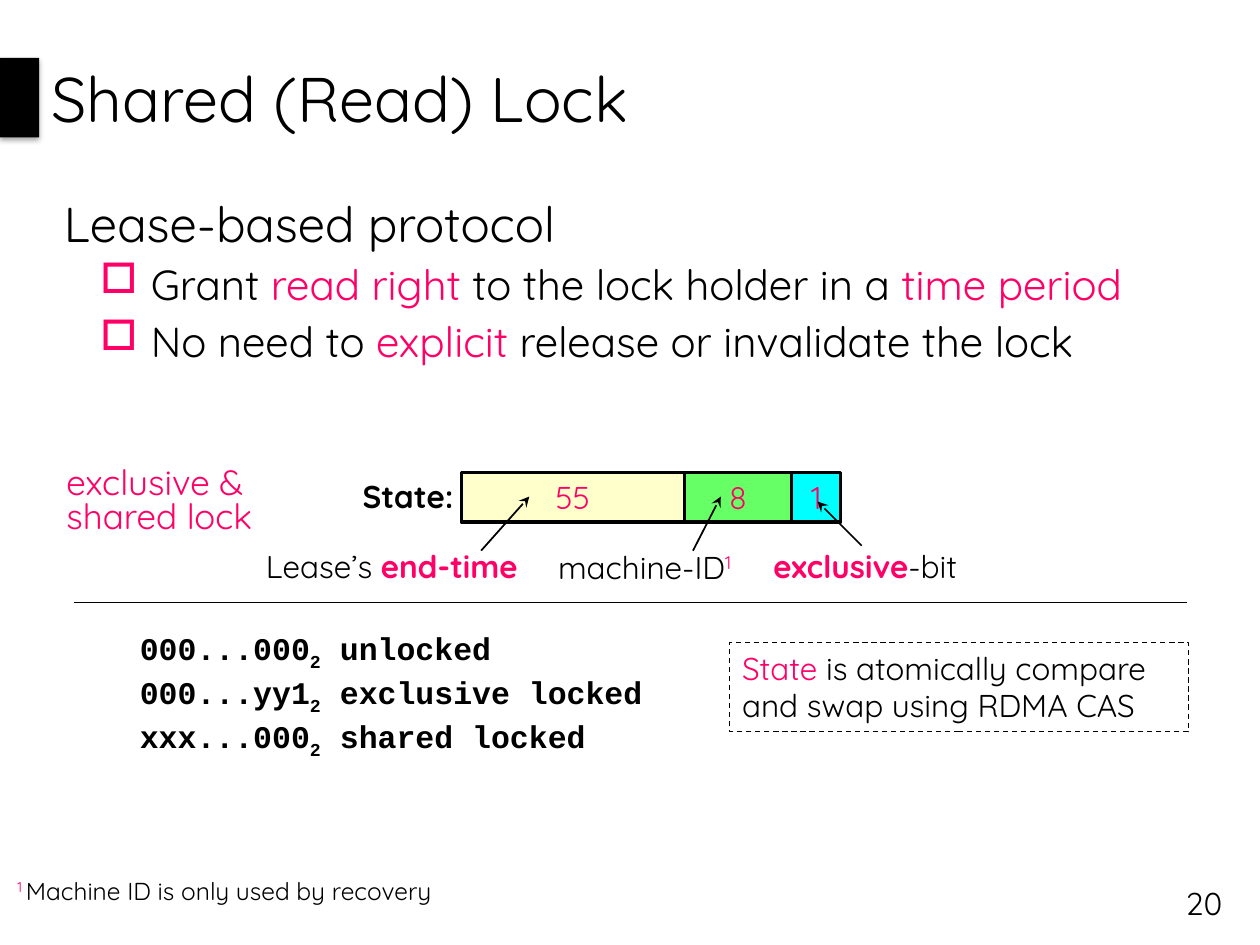
from lxml import etree
from pptx import Presentation
from pptx.dml.color import RGBColor
from pptx.enum.dml import MSO_LINE
from pptx.enum.shapes import MSO_CONNECTOR, MSO_SHAPE
from pptx.enum.text import MSO_ANCHOR, PP_ALIGN
from pptx.oxml import parse_xml
from pptx.oxml.ns import nsdecls, qn
from pptx.util import Cm, Pt

BLACK = RGBColor(0x00, 0x00, 0x00)
PINK = RGBColor(0xFF, 0x00, 0x66)
CREAM = RGBColor(0xFF, 0xFF, 0xCC)
GREEN = RGBColor(0x66, 0xFF, 0x66)
CYAN = RGBColor(0x00, 0xFF, 0xFF)

# A run is (text, colour, bold, baseline in percent); the last ones may be left out.
TITLE = [("Shared (Read) Lock",)]
HEADING = [("Lease-based protocol",)]
BULLETS = [
    [("Grant ",), ("read right ", PINK), ("to the lock holder in a ",), ("time period", PINK)],
    [("No need to ",), ("explicit ", PINK), ("release or invalidate the lock",)],
]
FIELDS = [("55", 4.5, CREAM), ("8", 2.16, GREEN), ("1", 0.99, CYAN)]
FIELDS_LEFT, FIELDS_TOP, FIELDS_HEIGHT = 9.3, 9.53, 0.99
FIELD_LABELS = [  # left, top, width, runs
    (5.11, 10.9, 6.17, [("Lease’s ",), ("end-time", PINK, True)]),
    (11.0, 10.92, 4.6, [("machine-ID",), ("1", PINK, False, 30)]),
    (15.34, 10.9, 5.05, [("exclusive", PINK, True), ("-bit",)]),
    (7.06, 9.5, 2.6, [("State:", BLACK, True)]),
]
ARROWS = [
    ((9.7, 11.1), (10.67, 10.01)),
    ((13.97, 11.1), (14.53, 10.01)),
    ((17.37, 11.0), (16.48, 10.11)),
]
STATES = [("000...000", " unlocked"), ("000...yy1", " exclusive locked"),
          ("xxx...000", " shared locked")]
STATES_TOP, STATE_STEP = 12.55, 0.89
CAS_NOTE = [("State ", PINK), ("is atomically compare and swap using RDMA CAS",)]
FOOTNOTE = [("1 ", PINK, False, 30), ("Machine ID is only used by recovery",)]


def write(para, runs, size=18, font="Quicksand", **formats):
    for name, value in formats.items():
        setattr(para, name, value)
    for text, *rest in runs:
        color, bold, baseline = (rest + [BLACK, False, 0][len(rest):])
        span = para.add_run()
        span.text = text
        for name, value in {"size": Pt(size), "name": font, "bold": bold}.items():
            setattr(span.font, name, value)
        span.font.color.rgb = color
        if baseline:
            span.font._element.set("baseline", str(baseline * 1000))


def indent(para, left, bullet=None, hang=0.0):
    """Set a hanging indent, with a pink bullet if one is given."""
    props = para._p.get_or_add_pPr()
    props.set("marL", str(Cm(left)))
    props.set("indent", str(-Cm(hang)))
    if bullet:
        color = etree.SubElement(props, qn("a:buClr"))
        etree.SubElement(color, qn("a:srgbClr"), val=str(PINK))
        etree.SubElement(props, qn("a:buChar"), char=bullet)


def add_text(page, left, top, width, height, runs, anchor=MSO_ANCHOR.TOP, **formats):
    box = page.shapes.add_textbox(Cm(left), Cm(top), Cm(width), Cm(height))
    box.text_frame.word_wrap = True
    box.text_frame.vertical_anchor = anchor
    write(box.text_frame.paragraphs[0], runs, **formats)
    return box


def add_rectangle(page, left, top, width, height, fill=None, line_width=0):
    box = page.shapes.add_shape(MSO_SHAPE.RECTANGLE, Cm(left), Cm(top), Cm(width), Cm(height))
    box.shadow.inherit = False
    if fill is None:
        box.fill.background()
    else:
        box.fill.solid()
        box.fill.fore_color.rgb = fill
    if line_width:
        box.line.color.rgb = BLACK
        box.line.width = Pt(line_width)
    else:
        box.line.fill.background()
    return box


def add_line(page, start, end, width, arrow=False):
    line = page.shapes.add_connector(MSO_CONNECTOR.STRAIGHT, *map(Cm, start + end))
    line.line.color.rgb = BLACK
    line.line.width = Pt(width)
    if arrow:
        etree.SubElement(line.line._get_or_add_ln(), qn("a:tailEnd"), type="stealth")
    etree.SubElement(line._element.spPr, qn("a:effectLst"))


def add_heading_part(page):
    marker = add_rectangle(page, 0, 1.17, 0.79, 1.6, BLACK)
    marker._element.spPr.find(qn("a:effectLst")).append(parse_xml(
        f'<a:outerShdw {nsdecls("a")} blurRad="40000" dist="23000" dir="5400000" '
        'rotWithShape="0"><a:srgbClr val="000000"><a:alpha val="35000"/></a:srgbClr>'
        '</a:outerShdw>'))
    add_text(page, 0.79, 0, 24.61, 3.94, TITLE, MSO_ANCHOR.MIDDLE, size=36)
    body = add_text(page, 1.04, 3.78, 23.67, 6.55, HEADING, size=28)
    indent(body.text_frame.paragraphs[0], 0.48, hang=0.48)
    for runs in BULLETS:
        para = body.text_frame.add_paragraph()
        write(para, runs, size=24, space_before=Pt(3.5))
        indent(para, 1.75, "□", 1.02)


def add_state_layout(page):
    left = FIELDS_LEFT
    for bits, width, fill in FIELDS:
        field = add_rectangle(page, left, FIELDS_TOP, width, FIELDS_HEIGHT, fill, 2)
        field.text_frame.vertical_anchor = MSO_ANCHOR.MIDDLE
        write(field.text_frame.paragraphs[0], [(bits, PINK)], alignment=PP_ALIGN.CENTER)
        left += width
    add_text(page, 1.09, 9.32, 4.57, 1.63, [("exclusive & shared lock", PINK)],
             size=20, line_spacing=0.8)
    for left, top, width, runs in FIELD_LABELS:
        add_text(page, left, top, width, 1.02, runs)
    for start, end in ARROWS:
        add_line(page, start, end, 1, arrow=True)
    add_line(page, (1.5, 12.14), (23.93, 12.14), 0.75)


def add_state_values(page):
    for row, (bits, meaning) in enumerate(STATES):
        runs = [(bits, BLACK, True), ("2", BLACK, True, -25), (meaning, BLACK, True)]
        add_text(page, 2.57, STATES_TOP + row * STATE_STEP, 11.2, 1.02, runs,
                 font="Courier New")
    note = add_rectangle(page, 14.71, 12.95, 9.25, 1.8, line_width=0.75)
    note.line.dash_style = MSO_LINE.DASH
    note.text_frame.vertical_anchor = MSO_ANCHOR.TOP
    write(note.text_frame.paragraphs[0], CAS_NOTE, alignment=PP_ALIGN.LEFT)


def main():
    deck = Presentation()
    deck.slide_width, deck.slide_height = Cm(25.4), Cm(19.05)
    page = deck.slides.add_slide(deck.slide_layouts[6])
    add_heading_part(page)
    add_state_layout(page)
    add_state_values(page)
    footnote = add_text(page, 0.1, 17.53, 20.6, 1.45, FOOTNOTE, size=14)
    indent(footnote.text_frame.paragraphs[0], 0.25, hang=0.25)
    add_text(page, 23.29, 17.7, 1.6, 1.02, [("20",)], MSO_ANCHOR.MIDDLE,
             alignment=PP_ALIGN.RIGHT)
    deck.save("out.pptx")


if __name__ == "__main__":
    main()
